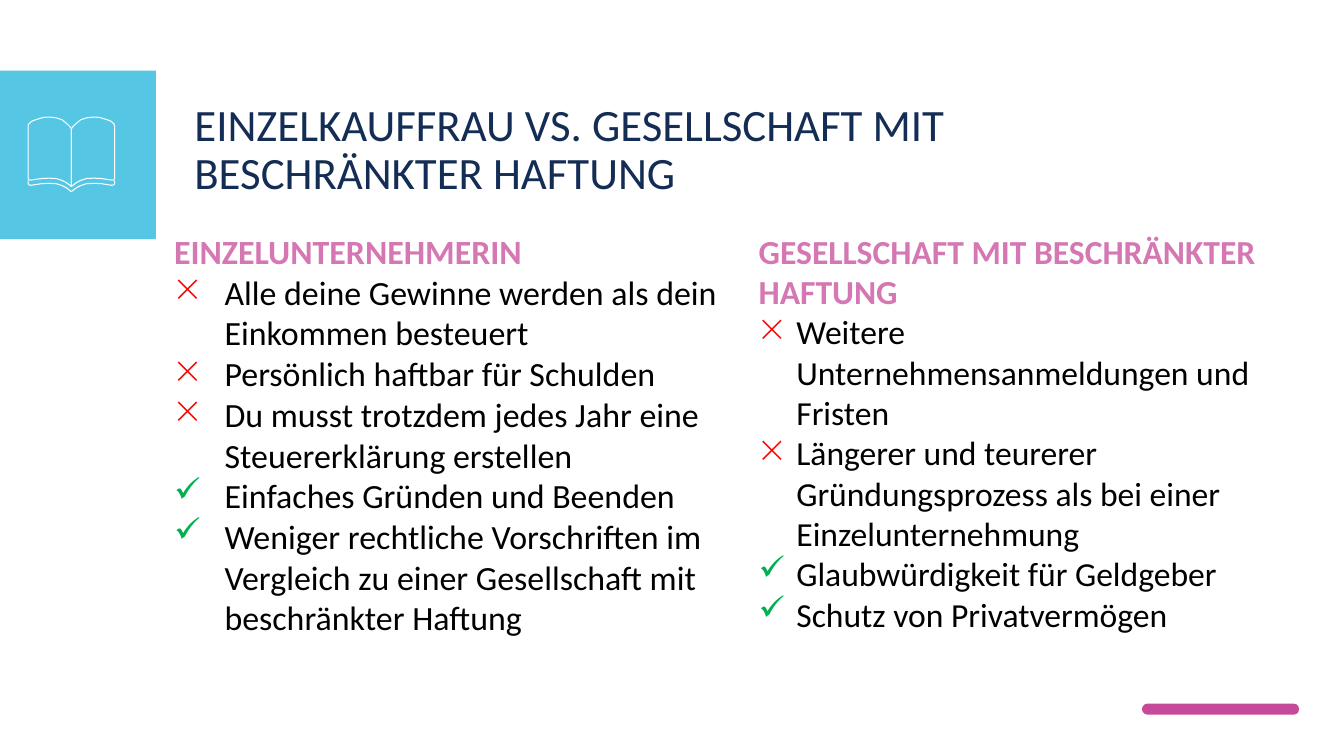
from dataclasses import dataclass

from lxml import etree
from pptx import Presentation
from pptx.dml.color import RGBColor
from pptx.enum.shapes import MSO_SHAPE
from pptx.oxml.ns import qn
from pptx.util import Cm, Pt

RECT = MSO_SHAPE.RECTANGLE
ROUND = MSO_SHAPE.ROUNDED_RECTANGLE


@dataclass(frozen=True)
class Theme:
    font: str = "Calibri"
    navy: str = "142D55"
    head: str = "D477B3"
    bar: str = "C54A9A"
    sky: str = "1EB3DD"
    white: str = "FFFFFF"
    black: str = "000000"
    red: str = "FF0000"
    green: str = "00B050"
    title: float = 32
    left: float = 24.2
    right: float = 24


THEME = Theme()
MARKS = {"×": THEME.red, "✓": THEME.green}

SPINE = 180
PAGE = [
    (0, 325), (0, 470), (13, 460), (23, 455), (38, 450), (56, 449),
    (76, 450), (102, 454), (107, 454), (109, 450), (109, 317), (107, 312),
    (99, 305), (84, 300), (71, 296), (56, 295), (38, 297), (23, 302),
    (8, 315), (3, 320),
]
EDGE = [
    (109, 455), (109, 462), (107, 466), (102, 467), (76, 463), (56, 462),
    (38, 463), (23, 468), (13, 473), (0, 483),
]

SOLE = [
    ("×", "Alle deine Gewinne werden als dein Einkommen besteuert"),
    ("×", "Persönlich haftbar für Schulden"),
    ("×", "Du musst trotzdem jedes Jahr eine Steuererklärung erstellen"),
    ("✓", "Einfaches Gründen und Beenden"),
    ("✓", "Weniger rechtliche Vorschriften im Vergleich zu einer "
          "Gesellschaft mit beschränkter Haftung"),
]
FIRM = [
    ("×", "Weitere Unternehmensanmeldungen und Fristen"),
    ("×", "Längerer und teurerer Gründungsprozess als bei einer "
          "Einzelunternehmung"),
    ("✓", "Glaubwürdigkeit für Geldgeber"),
    ("✓", "Schutz von Privatvermögen"),
]


def add_block(slide, kind, box, color, alpha=100):
    shape = slide.shapes.add_shape(kind, *map(Cm, box))
    shape.shadow.inherit = False
    shape.fill.solid()
    shape.fill.fore_color.rgb = RGBColor.from_string(color)
    shape.line.fill.background()
    if alpha < 100:
        tint = shape.fill._xPr.find(".//" + qn("a:srgbClr"))
        etree.SubElement(tint, qn("a:alpha"), val=str(alpha * 1000))
    return shape


def add_path(slide, points, side, closed):
    spots = [(SPINE + side * x, y) for x, y in points]
    path = slide.shapes.build_freeform(*spots[0], scale=Cm(0.01))
    path.add_line_segments(spots[1:], close=closed)
    shape = path.convert_to_shape()
    shape.shadow.inherit = False
    shape.fill.background()
    shape.line.color.rgb = RGBColor.from_string(THEME.white)
    shape.line.width = Pt(0.75)


def add_book(slide):
    for points, closed in ((EDGE, False), (PAGE, True)):
        for side in (-1, 1):
            add_path(slide, points, side, closed)


def add_frame(slide, box):
    frame = slide.shapes.add_textbox(*map(Cm, box)).text_frame
    frame.word_wrap = True
    return frame


def set_font(para, size, color, bold=False):
    font = para.font
    font.name = THEME.font
    font.size = Pt(size)
    font.bold = bold
    font.color.rgb = RGBColor.from_string(color)


def set_mark(para, mark, indent):
    props = para._p.get_or_add_pPr()
    props.set("marL", str(Cm(indent)))
    props.set("indent", str(-Cm(indent)))
    tint = etree.SubElement(props, qn("a:buClr"))
    etree.SubElement(tint, qn("a:srgbClr"), val=MARKS[mark])
    etree.SubElement(props, qn("a:buChar"), char=mark)


def add_title(slide, text, box):
    para = add_frame(slide, box).paragraphs[0]
    para.text = text
    para.line_spacing = 0.9
    set_font(para, THEME.title, THEME.navy)


def add_list(slide, head, items, box, size, indent):
    frame = add_frame(slide, box)
    para = frame.paragraphs[0]
    para.text = head
    set_font(para, size, THEME.head, True)
    for mark, text in items:
        para = frame.add_paragraph()
        para.text = text
        set_mark(para, mark, indent)
        set_font(para, size, THEME.black)


def main():
    deck = Presentation()
    deck.slide_width, deck.slide_height = Cm(33.87), Cm(19.05)
    slide = deck.slides.add_slide(deck.slide_layouts[6])
    add_block(slide, RECT, (-0.03, 1.78, 3.96, 4.25), THEME.sky, 75)
    bar = add_block(slide, ROUND, (28.78, 17.73, 3.96, 0.28), THEME.bar)
    bar.adjustments[0] = 0.5
    add_title(slide, "EINZELKAUFFRAU VS. GESELLSCHAFT MIT BESCHRÄNKTER HAFTUNG",
              (4.65, 2.46, 26.8, 2.72))
    add_book(slide)
    add_list(slide, "EINZELUNTERNEHMERIN", SOLE,
             (4.14, 5.69, 14.76, 12.98), THEME.left, 1.27)
    add_list(slide, "GESELLSCHAFT MIT BESCHRÄNKTER HAFTUNG", FIRM,
             (18.87, 5.69, 13.34, 12.24), THEME.right, 0.95)
    deck.save("out.pptx")


if __name__ == "__main__":
    main()
